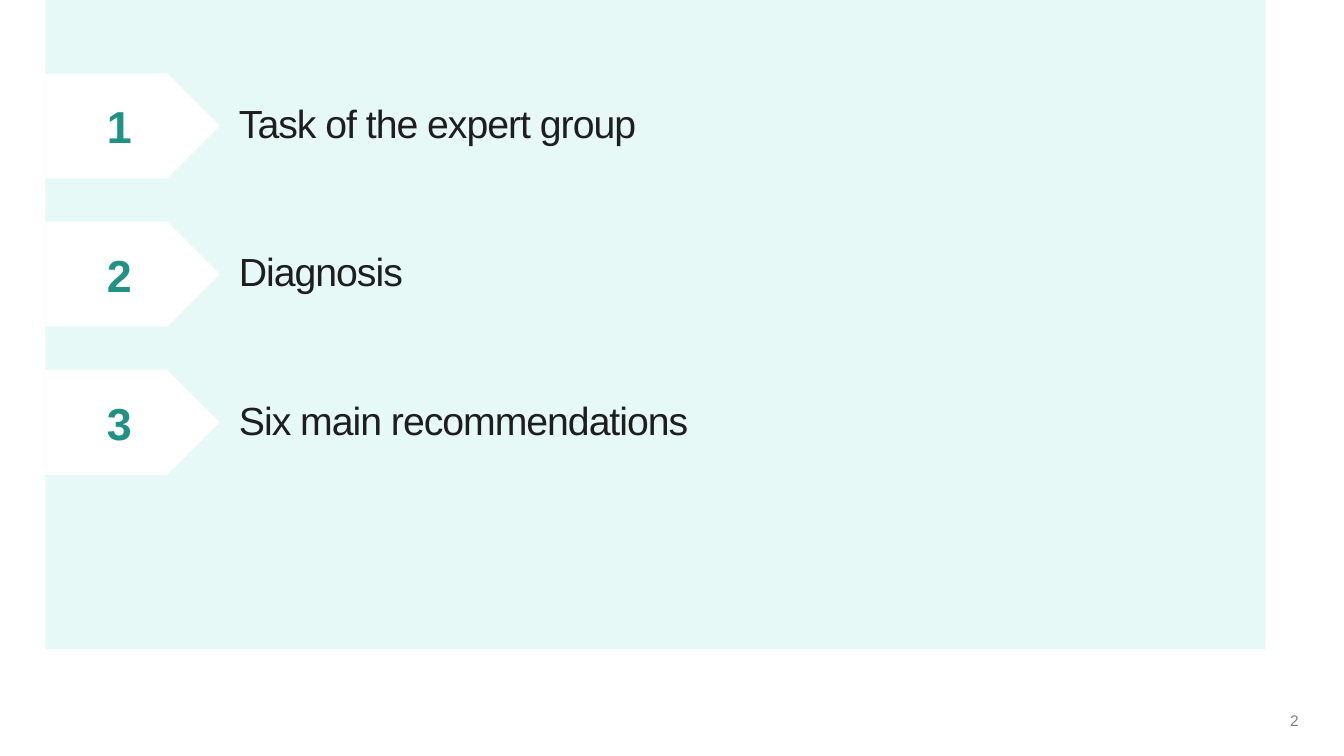
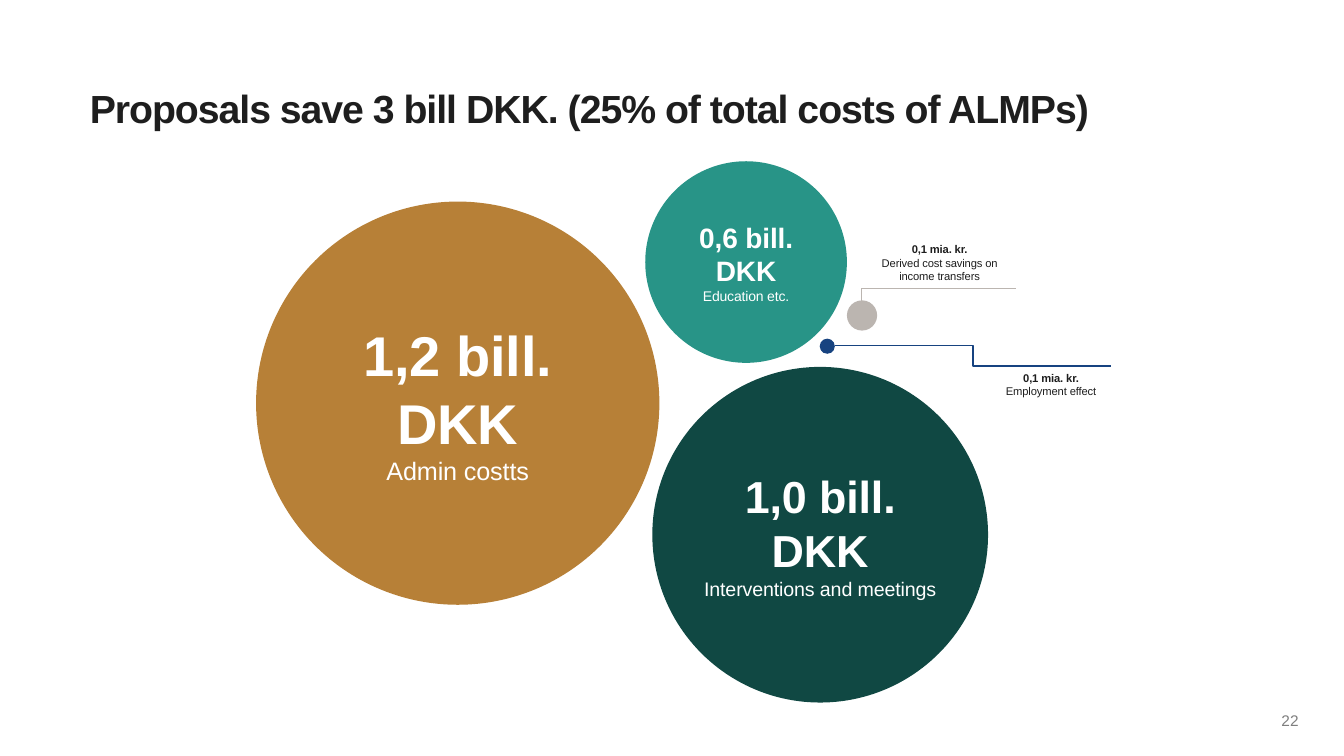
from lxml.etree import SubElement
from pptx import Presentation
from pptx.dml.color import RGBColor
from pptx.enum.shapes import MSO_CONNECTOR, MSO_SHAPE
from pptx.enum.text import MSO_ANCHOR, MSO_AUTO_SIZE, PP_ALIGN
from pptx.oxml.ns import qn
from pptx.util import Inches, Pt

COLORS = {
    "mint": "E6F9F7", "white": "FFFFFF", "number": "209185", "ink": "1E1E1E",
    "page": "7F7F7F", "gold": "B78037", "forest": "104843", "teal": "289487",
    "navy": "174380", "stone": "BBB5B0",
}
FONT = "Arial"
TITLE_ONLY, BLANK = 5, 6


def color(name):
    """Return the named colour."""
    return RGBColor.from_string(COLORS[name])


class Deck:
    """Holds the shared style and the current slide."""

    def __init__(self):
        """Start an empty widescreen presentation."""
        self.presentation = Presentation()
        self.presentation.slide_width = Inches(13.33)
        self.presentation.slide_height = Inches(7.5)
        self.slide = None

    def new_slide(self, page, title=None):
        """Add a slide with its page number and optional title."""
        layout = self.presentation.slide_layouts[TITLE_ONLY if title else BLANK]
        self.slide = self.presentation.slides.add_slide(layout)
        if title:
            self.title(title)
        self.text((12.44, 7.08, 0.44, 0.14), [(page, 11, False)], "page",
                  align=PP_ALIGN.RIGHT)

    def set_lines(self, shape, lines, ink, align=PP_ALIGN.LEFT, anchor=MSO_ANCHOR.MIDDLE,
                  margins=(0, 0), tracking=0, spacing=1.0):
        """Fill a shape with (text, size, bold) paragraphs."""
        frame = shape.text_frame
        frame.text = "\n".join(text for text, _, _ in lines)
        frame.word_wrap = True
        frame.auto_size = MSO_AUTO_SIZE.NONE
        frame.vertical_anchor = anchor
        frame.margin_left = frame.margin_right = Inches(margins[0])
        frame.margin_top = frame.margin_bottom = Inches(margins[1])
        for paragraph, (_, size, bold) in zip(frame.paragraphs, lines):
            paragraph.alignment = align
            paragraph.line_spacing = spacing
            for run in paragraph.runs:
                run.font.name = FONT
                run.font.size = Pt(size)
                run.font.bold = bold
                run.font.color.rgb = color(ink)
                run.font._element.set("spc", str(round(tracking * 100)))

    def title(self, text):
        """Place and format the title placeholder."""
        heading = self.slide.shapes.title
        heading.left, heading.top = Inches(0.89), Inches(0.89)
        heading.width, heading.height = Inches(11.56), Inches(0.44)
        self.set_lines(heading, [(text, 28, True)], "ink", anchor=MSO_ANCHOR.TOP,
                       tracking=-0.7, spacing=0.9)

    def text(self, box, lines, ink, **style):
        """Add a text box."""
        label = self.slide.shapes.add_textbox(*map(Inches, box))
        self.set_lines(label, lines, ink, **style)

    def shape(self, kind, box, fill, lines=(), ink="white", **style):
        """Add a filled shape without outline, with optional centred text."""
        figure = self.slide.shapes.add_shape(kind, *map(Inches, box))
        figure.shadow.inherit = False
        figure.fill.solid()
        figure.fill.fore_color.rgb = color(fill)
        figure.line.fill.background()
        if lines:
            self.set_lines(figure, lines, ink, align=PP_ALIGN.CENTER, tracking=-0.1, **style)

    def circle(self, left, top, diameter, fill, lines=()):
        """Add a circle with optional text."""
        self.shape(MSO_SHAPE.OVAL, (left, top, diameter, diameter), fill, lines)

    def elbow(self, start, end, stroke, bend):
        """Add a bent line that turns at a share of its width."""
        leader = self.slide.shapes.add_connector(
            MSO_CONNECTOR.ELBOW, *map(Inches, start + end))
        leader.line.color.rgb = color(stroke)
        leader.line.width = Pt(1)
        properties = leader._element.spPr
        guides = properties.find(qn("a:prstGeom")).get_or_add_avLst()
        SubElement(guides, qn("a:gd"), name="adj1", fmla=f"val {round(bend * 100000)}")
        SubElement(properties, qn("a:effectLst"))

    def callout(self, box, amount, effect):
        """Add a small label with a bold amount above its effect."""
        self.text(box, [(amount, 8, True), (effect, 8, False)], "ink",
                  align=PP_ALIGN.CENTER, anchor=MSO_ANCHOR.TOP,
                  margins=(0.1, 0.05), tracking=-0.1)


def agenda(deck):
    """Build the agenda slide."""
    deck.new_slide("2")
    deck.shape(MSO_SHAPE.RECTANGLE, (0.45, 0, 12.1, 6.44), "mint")
    topics = ["Task of the expert group", "Diagnosis", "Six main recommendations"]
    for index, topic in enumerate(topics):
        top = 0.73 + 1.47 * index
        deck.shape(MSO_SHAPE.PENTAGON, (0.45, top, 1.73, 1.04), "white",
                   [(str(index + 1), 32, True)], "number", margins=(0.18, 0.18))
        deck.text((2.37, top + 0.15, 9.86, 0.74), [(topic, 28, False)], "ink",
                  tracking=-0.7, spacing=0.9)


def savings(deck):
    """Build the savings slide."""
    deck.new_slide("22", "Proposals save 3 bill DKK. (25% of total costs of ALMPs)")
    deck.elbow((8.56, 3.08), (10.08, 2.86), "stone", -0.01)
    deck.elbow((8.28, 3.43), (11.02, 3.63), "navy", 0.5)
    bubbles = [
        (2.54, 2, 4, "gold", "1,2 bill. DKK", 40, "Admin costts", 18),
        (6.47, 3.64, 3.33, "forest", "1,0 bill. DKK", 32, "Interventions and meetings", 14),
        (6.4, 1.6, 2, "teal", "0,6 bill. DKK", 20, "Education etc.", 10),
    ]
    for left, top, diameter, fill, amount, amount_size, source, source_size in bubbles:
        deck.circle(left, top, diameter, fill,
                    [(amount, amount_size, True), (source, source_size, False)])
    deck.circle(8.13, 3.36, 0.15, "navy")
    deck.circle(8.4, 2.98, 0.3, "stone")
    deck.callout((9.64, 3.63, 1.57, 0.37), "0,1 mia. kr.", "Employment effect")
    deck.callout((8.56, 2.36, 1.52, 0.5), "0,1 mia. kr.",
                 "Derived cost savings on income transfers")


def main():
    """Build and save the slides."""
    deck = Deck()
    agenda(deck)
    savings(deck)
    deck.presentation.save("out.pptx")


if __name__ == "__main__":
    main()
